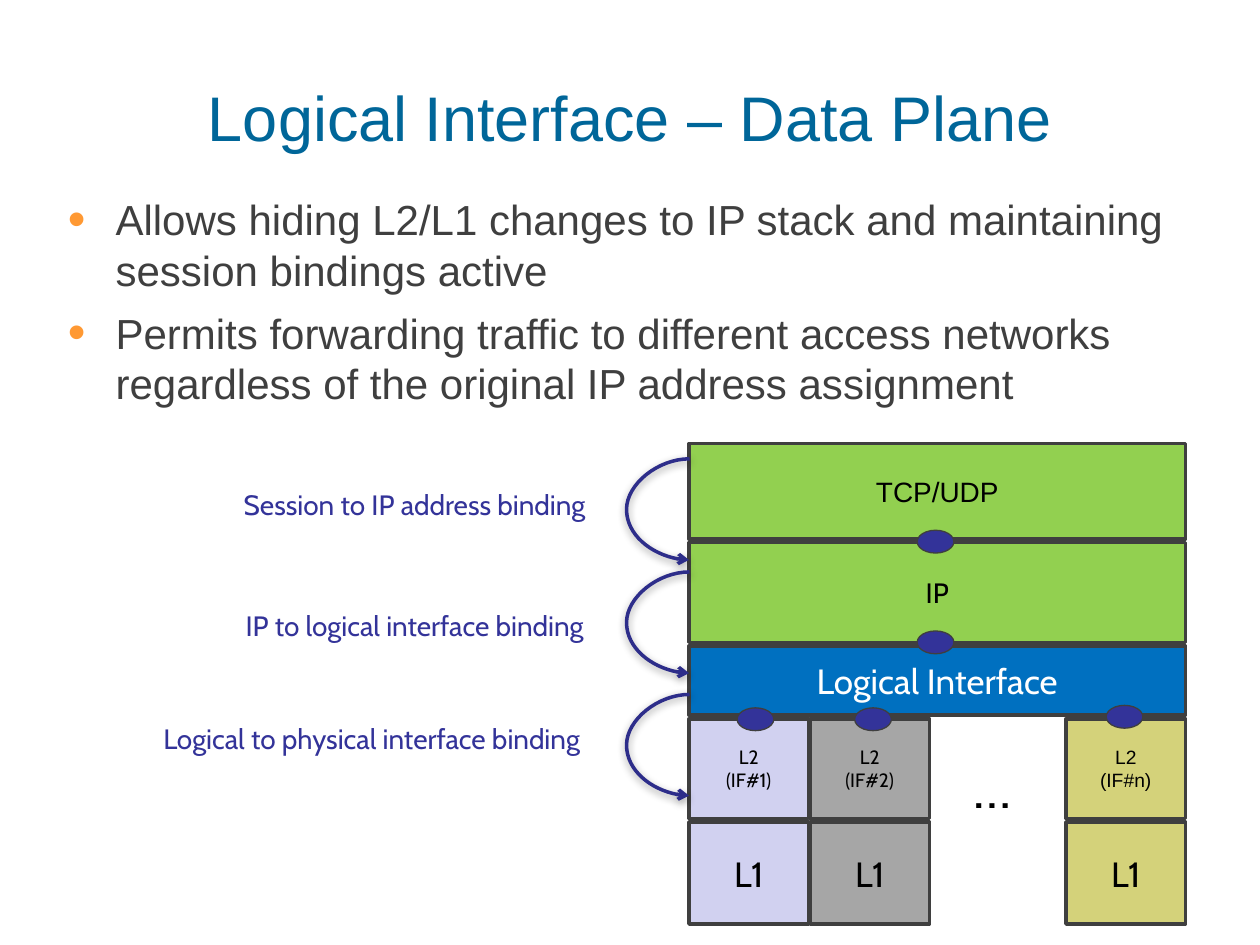
from dataclasses import dataclass

from lxml import etree
from pptx import Presentation
from pptx import util as u
from pptx.dml.color import RGBColor
from pptx.enum import dml, shapes, text
from pptx.oxml import parse_xml
from pptx.oxml.ns import nsdecls, qn


@dataclass(frozen=True)
class Theme:
    title: str = "006699"
    body: str = "3F3F3F"
    bullet: str = "FF9933"
    outline: str = "3F3F3F"
    black: str = "000000"
    white: str = "FFFFFF"
    green: str = "92D050"
    blue: str = "0070C0"
    lilac: str = "D1D1F0"
    grey: str = "A6A6A6"
    olive: str = "D4D27A"
    binding: str = "333399"
    arrow: str = "2D2D8A"
    title_size: int = 36
    body_size: int = 24
    dots_size: int = 32
    large_size: int = 20
    label_size: int = 16
    small_size: int = 11
    sans: str = "Arial"
    cabin: str = "Cabin"


theme = Theme()


def style_text(paragraph, size, color, font, align=text.PP_ALIGN.CENTER):
    paragraph.alignment = align
    paragraph.font.size = u.Pt(size)
    paragraph.font.name = font
    paragraph.font.color.rgb = RGBColor.from_string(color)


def add_filled(kind, left, top, width, height, fill, line_width):
    shape = slide.shapes.add_shape(kind, u.Cm(left), u.Cm(top), u.Cm(width), u.Cm(height))
    shape.shadow.inherit = False
    shape.fill.solid()
    shape.fill.fore_color.rgb = RGBColor.from_string(fill)
    shape.line.color.rgb = RGBColor.from_string(theme.outline)
    shape.line.width = u.Pt(line_width)
    return shape


presentation = Presentation()
presentation.slide_width, presentation.slide_height = u.Cm(25.4), u.Cm(19.05)
slide = presentation.slides.add_slide(presentation.slide_layouts[1])

# Title and bullet list
title, body = slide.shapes.title, slide.placeholders[1]
for placeholder, top, height, anchor in [
    (title, 0.25, 4.19, text.MSO_ANCHOR.MIDDLE),
    (body, 3.81, 14.6, text.MSO_ANCHOR.TOP),
]:
    placeholder.left, placeholder.top = u.Cm(1.27), u.Cm(top)
    placeholder.width, placeholder.height = u.Cm(22.86), u.Cm(height)
    frame = placeholder.text_frame
    frame.auto_size = text.MSO_AUTO_SIZE.NONE
    frame.vertical_anchor = anchor
    frame.margin_left = frame.margin_right = u.Cm(0.1)
    frame.margin_top = frame.margin_bottom = u.Cm(0.1)

title.text_frame.text = "Logical Interface – Data Plane"
style_text(title.text_frame.paragraphs[0], theme.title_size, theme.title, theme.sans)

body.text_frame.text = (
    "Allows hiding L2/L1 changes to IP stack and maintaining session bindings active\n"
    "Permits forwarding traffic to different access networks "
    "regardless of the original IP address assignment"
)
for paragraph in body.text_frame.paragraphs:
    paragraph.space_before = u.Pt(7)
    properties = paragraph._p.get_or_add_pPr()
    properties.set("marL", str(u.Cm(0.96)))
    properties.set("indent", str(-u.Cm(0.96)))
    bullet_color = etree.SubElement(properties, qn("a:buClr"))
    etree.SubElement(bullet_color, qn("a:srgbClr"), val=theme.bullet)
    etree.SubElement(properties, qn("a:buSzPct"), val="120000")
    etree.SubElement(properties, qn("a:buChar"), char="•")
    style_text(paragraph, theme.body_size, theme.body, theme.sans, text.PP_ALIGN.LEFT)

# Protocol stack: full-width layers above three interface columns
stack_left, stack_width, column_width = 13.89, 10.01, 2.41
columns = [
    (stack_left, theme.lilac, "L2\v(IF#1)", theme.cabin),
    (stack_left + column_width + 0.03, theme.grey, "L2\v(IF#2)", theme.cabin),
    (stack_left + stack_width - column_width, theme.olive, "L2\v(IF#n)", theme.sans),
]


def full_row(label, fill, color, size, font):
    return [(stack_left, stack_width, fill, label, color, size, font)]


rows = [
    (1.93, full_row("TCP/UDP", theme.green, theme.black, theme.label_size, theme.sans)),
    (2.01, full_row("IP", theme.green, theme.black, theme.label_size, theme.cabin)),
    (1.4, full_row("Logical Interface", theme.blue, theme.white, theme.large_size, theme.cabin)),
    (2.01, [(left, column_width, fill, label, theme.black, theme.small_size, font)
            for left, fill, label, font in columns]),
    (2.06, [(left, column_width, fill, "L1", theme.black, theme.large_size, theme.cabin)
            for left, fill, _, _ in columns]),
]
row_top, row_gap = 8.94, 0.07
for height, cells in rows:
    for left, width, fill, label, color, size, font in cells:
        box = add_filled(shapes.MSO_SHAPE.RECTANGLE, left, row_top, width, height, fill, 2)
        box.text_frame.word_wrap = False
        box.text_frame.vertical_anchor = text.MSO_ANCHOR.MIDDLE
        box.text_frame.text = label
        style_text(box.text_frame.paragraphs[0], size, color, font)
    row_top += height + row_gap

# Binding labels and the dots between columns
for label, left, top, width, height, size, color, wrap in [
    ("…", 19.38, 15.04, 1.14, 1.02, theme.dots_size, theme.black, False),
    ("Session to IP address binding", 4.27, 9.7, 8.18, 0.94,
     theme.label_size, theme.binding, True),
    ("IP to logical interface binding", 4.27, 12.14, 8.18, 0.94,
     theme.label_size, theme.binding, True),
    ("Logical to physical interface binding", 2.54, 14.43, 9.91, 0.94,
     theme.label_size, theme.binding, True),
]:
    box = slide.shapes.add_textbox(u.Cm(left), u.Cm(top), u.Cm(width), u.Cm(height))
    box.text_frame.word_wrap = wrap
    box.text_frame.text = label
    style_text(box.text_frame.paragraphs[0], size, color, theme.cabin)

# Curved arrows bulging 1.27 cm to the left of the stack
arrow_width, arrow_height, bulge = 0.01, 2.04, 1.27
for top in (9.25, 11.53, 14.0):
    arrow = slide.shapes.add_connector(
        shapes.MSO_CONNECTOR.CURVE,
        u.Cm(stack_left), u.Cm(top + arrow_height),
        u.Cm(stack_left + arrow_width), u.Cm(top),
    )
    arrow.line.color.rgb = RGBColor.from_string(theme.arrow)
    arrow.line.width = u.Pt(2)
    arrow.line.dash_style = dml.MSO_LINE.SOLID
    properties = arrow._element.spPr
    properties.find(qn("a:xfrm")).set("rot", "10800000")
    geometry = properties.find(qn("a:prstGeom"))
    adjustments = geometry.find(qn("a:avLst"))
    if adjustments is None:
        adjustments = etree.SubElement(geometry, qn("a:avLst"))
    ratio = round(bulge / arrow_width * 100000)
    etree.SubElement(adjustments, qn("a:gd"), name="adj1", fmla=f"val {ratio}")
    etree.SubElement(properties.find(qn("a:ln")), qn("a:tailEnd"), type="arrow")
    properties.append(parse_xml(
        f'<a:effectLst {nsdecls("a")}><a:outerShdw blurRad="{u.Pt(5)}" dist="{u.Pt(1.6)}" '
        f'dir="5400000" rotWithShape="0"><a:srgbClr val="{theme.black}">'
        '<a:alpha val="38000"/></a:srgbClr></a:outerShdw></a:effectLst>'
    ))

# Binding points, given by their centres
point_width, point_height = 0.74, 0.46
for x, y in [(18.86, 12.95), (15.23, 14.5), (17.6, 14.5), (22.67, 14.45), (18.86, 10.92)]:
    add_filled(shapes.MSO_SHAPE.OVAL, x - point_width / 2, y - point_height / 2,
               point_width, point_height, theme.binding, 0.75)

presentation.save("out.pptx")
